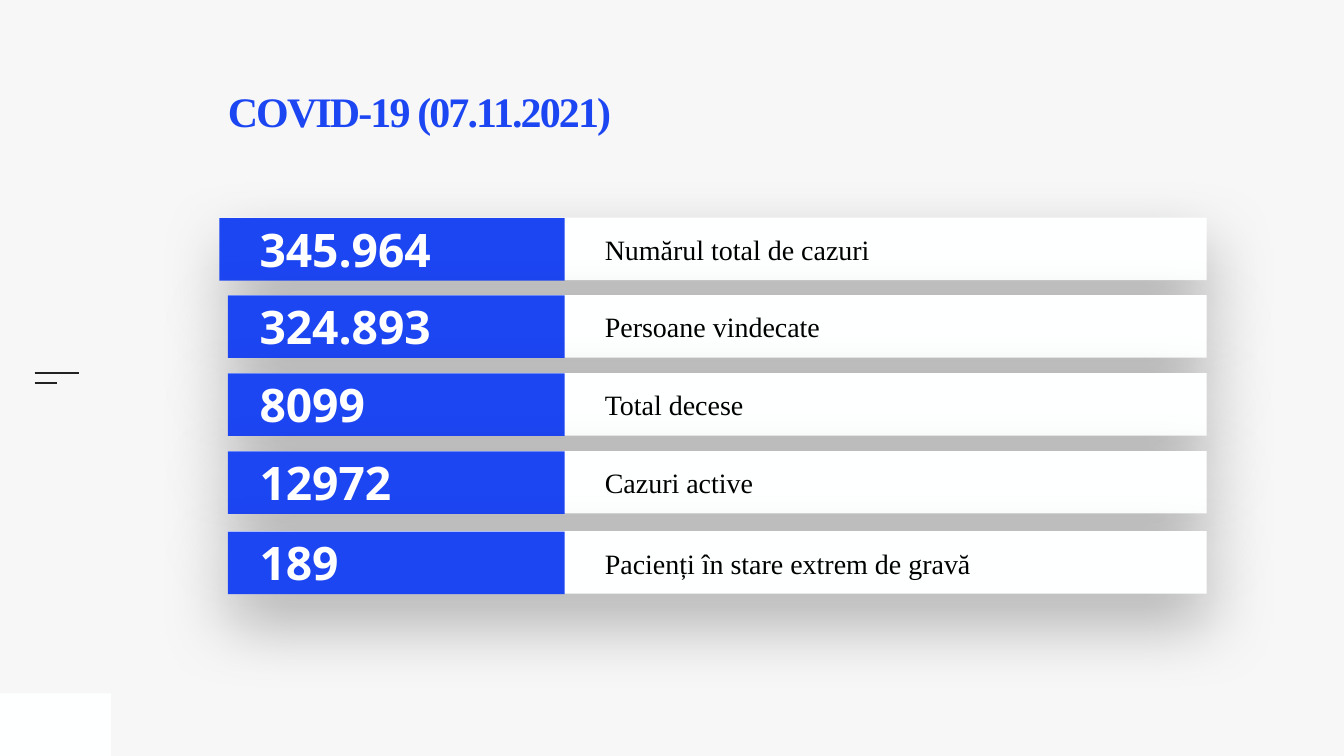
from dataclasses import dataclass

from lxml.etree import SubElement
from pptx import Presentation
from pptx.dml.color import RGBColor
from pptx.enum.shapes import MSO_CONNECTOR, MSO_SHAPE
from pptx.enum.text import MSO_ANCHOR
from pptx.oxml.ns import qn
from pptx.util import Cm, Pt


@dataclass(frozen=True)
class Theme:
    background: str = "F7F7F7"
    panel: str = "FEFFFF"
    accent: str = "1D46F3"
    rule: str = "222222"
    label: str = "000000"
    figure: str = "FFFFFF"
    shadow: str = "000000"
    serif: str = "Times New Roman"
    sans: str = "Open Sans"
    title_size: int = 60
    figure_size: int = 66
    label_size: int = 40


THEME = Theme()

ROW_LEFT, ROW_RIGHT, ROW_HEIGHT = 11.48, 60.81, 3.15
BADGE_RIGHT = 28.45

# top of the row, left edge of its badge, figure, label
STATISTICS = [
    (10.97, 11.05, "345.964", "Numărul total de cazuri"),
    (14.87, ROW_LEFT, "324.893", "Persoane vindecate"),
    (18.8, ROW_LEFT, "8099", "Total decese"),
    (22.73, ROW_LEFT, "12972", "Cazuri active"),
    (26.77, ROW_LEFT, "189", "Pacienți în stare extrem de gravă"),
]


def add_bar(shapes, left, top, width, height, color):
    bar = shapes.add_shape(MSO_SHAPE.RECTANGLE, Cm(left), Cm(top), Cm(width), Cm(height))
    bar.shadow.inherit = False
    bar.fill.solid()
    bar.fill.fore_color.rgb = RGBColor.from_string(color)
    bar.line.fill.background()
    return bar


def add_soft_shadow(bar):
    """Give the bar a wide, blurred shadow that falls straight down."""
    effects = bar._element.spPr.find(qn("a:effectLst"))
    shadow = SubElement(effects, qn("a:outerShdw"), blurRad=str(Pt(100)),
                        dist=str(Pt(40)), dir="5400000", algn="ctr", rotWithShape="0")
    color = SubElement(shadow, qn("a:srgbClr"), val=THEME.shadow)
    SubElement(color, qn("a:alpha"), val="30000")


def add_rule(shapes, left, right, y):
    rule = shapes.add_connector(MSO_CONNECTOR.STRAIGHT, Cm(left), Cm(y), Cm(right), Cm(y))
    rule.line.color.rgb = RGBColor.from_string(THEME.rule)
    rule.line.width = Pt(3)
    SubElement(rule._element.spPr, qn("a:effectLst"))


def add_text(shapes, text, left, top, width, height, *, font, size, color, bold=False,
             anchor=MSO_ANCHOR.MIDDLE, inset=0.25, line_spacing=None, tracking=None):
    """Add one line of text; tracking is in hundredths of a point."""
    box = shapes.add_textbox(Cm(left), Cm(top), Cm(width), Cm(height))
    frame = box.text_frame
    frame.word_wrap = True
    frame.vertical_anchor = anchor
    frame.margin_left = frame.margin_right = Cm(inset)
    frame.margin_top = frame.margin_bottom = Cm(inset)
    paragraph = frame.paragraphs[0]
    if line_spacing:
        paragraph.line_spacing = line_spacing
    run = paragraph.add_run()
    run.text = text
    run.font.name = font
    run.font.size = Pt(size)
    run.font.bold = bold
    run.font.color.rgb = RGBColor.from_string(color)
    if tracking:
        run.font._element.set("spc", str(tracking))


def add_statistic(slide, top, badge_left, figure, label):
    row = slide.shapes.add_group_shape().shapes
    panel = add_bar(row, ROW_LEFT, top, ROW_RIGHT - ROW_LEFT, ROW_HEIGHT, THEME.panel)
    add_soft_shadow(panel)
    add_text(row, label, 30.23, top + 0.48, 29.95, 2.24,
             font=THEME.serif, size=THEME.label_size, color=THEME.label)
    add_bar(row, badge_left, top + 0.02, BADGE_RIGHT - badge_left, ROW_HEIGHT, THEME.accent)
    add_text(row, figure, 12.83, top - 0.09, 15.37, 3.33,
             font=THEME.sans, size=THEME.figure_size, color=THEME.figure, bold=True)


def main():
    deck = Presentation()
    deck.slide_width, deck.slide_height = Cm(67.73), Cm(38.1)
    slide = deck.slides.add_slide(deck.slide_layouts[6])
    slide.background.fill.solid()
    slide.background.fill.fore_color.rgb = RGBColor.from_string(THEME.background)

    add_bar(slide.shapes, 0, 34.95, 5.59, 3.15, THEME.panel)
    add_rule(slide.shapes, 1.75, 3.99, 18.82)
    add_rule(slide.shapes, 1.75, 2.87, 19.28)
    add_text(slide.shapes, "COVID-19 (07.11.2021)", ROW_LEFT, 4.78, 33.05, 6.93,
             font=THEME.serif, size=THEME.title_size, color=THEME.accent, bold=True,
             anchor=MSO_ANCHOR.TOP, inset=0, line_spacing=0.8, tracking=-270)
    for statistic in STATISTICS:
        add_statistic(slide, *statistic)

    deck.save("out.pptx")


if __name__ == "__main__":
    main()
